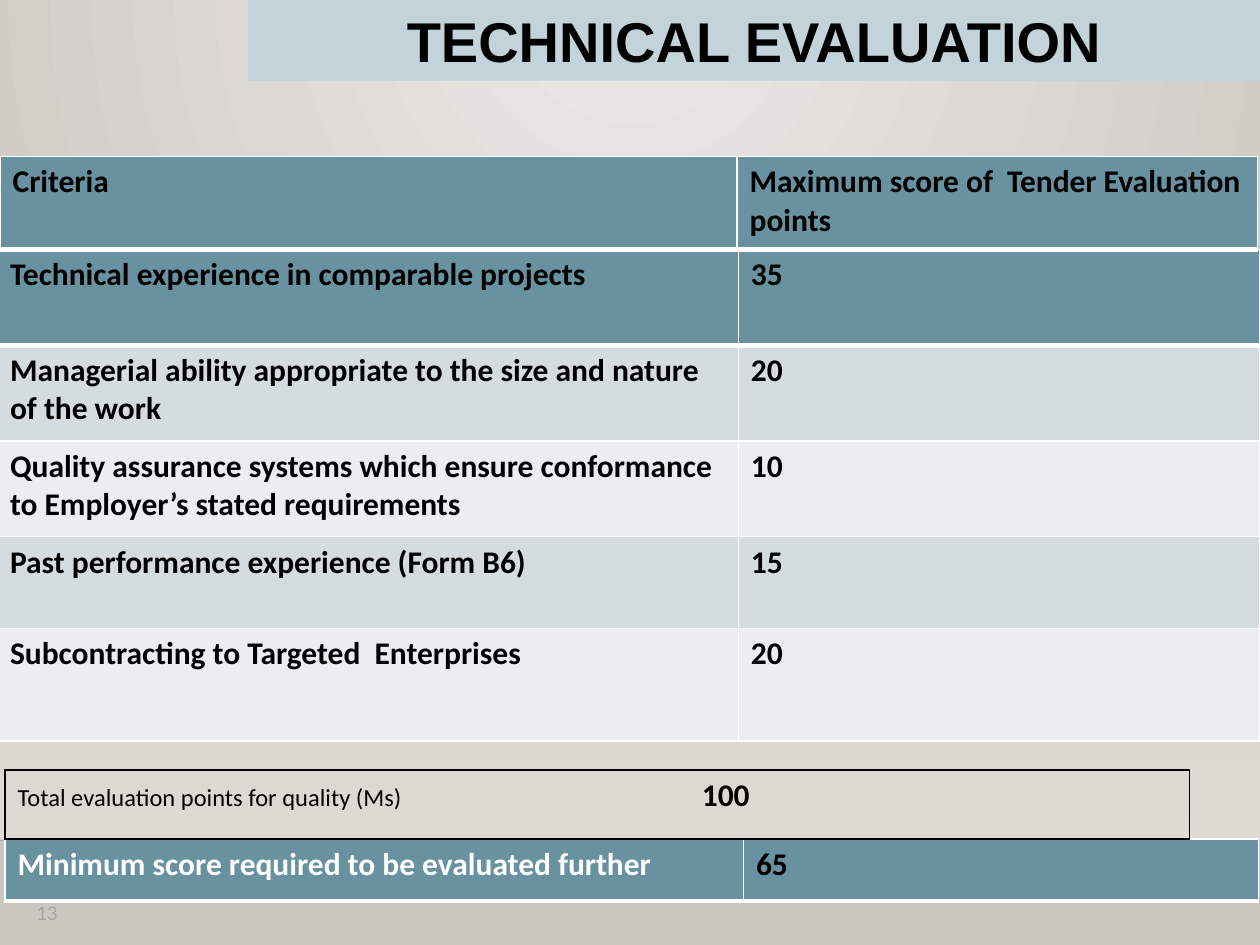
import pptx
import pptx.util
import pptx.oxml
import pptx.oxml.ns
import pptx.dml.color
import pptx.enum.shapes
import pptx.enum.text

Inches = pptx.util.Inches
Pt = pptx.util.Pt
RGBColor = pptx.dml.color.RGBColor
MSO_SHAPE = pptx.enum.shapes.MSO_SHAPE
PP_ALIGN = pptx.enum.text.PP_ALIGN
MSO_ANCHOR = pptx.enum.text.MSO_ANCHOR
qn = pptx.oxml.ns.qn
NS = pptx.oxml.ns.nsdecls("a")

BLACK = RGBColor(0x00, 0x00, 0x00)
NEAR_BLACK = RGBColor(0x00, 0x00, 0x01)
WHITE = RGBColor(0xFF, 0xFF, 0xFF)
GRAY = RGBColor(0xA6, 0xA6, 0xA6)
TEAL = RGBColor(0x68, 0x92, 0xA0)
PALE_BLUE = RGBColor(0xC3, 0xD3, 0xD9)
BAND_DARK = RGBColor(0xD4, 0xDC, 0xDF)
BAND_LIGHT = RGBColor(0xEB, 0xEE, 0xF0)
GLOW = RGBColor(0xEC, 0xEA, 0xE7)
STONE = RGBColor(0xCA, 0xC7, 0xC1)
SAND = RGBColor(0xDF, 0xDB, 0xD5)

BODY = {"name": "Calibri", "size": Pt(18), "bold": True, "color": BLACK}
LABEL = {**BODY, "size": Pt(14), "bold": False}
INVERSE = {**BODY, "color": WHITE}
NUMBER = {**LABEL, "size": Pt(12), "color": GRAY}
HEADING = {**BODY, "name": "Arial", "size": Pt(32)}

CRITERIA = [
    ("Technical experience in comparable projects", "35"),
    ("Managerial ability appropriate to the size and nature of the work", "20"),
    ("Quality assurance systems which ensure conformance to Employer’s stated requirements", "10"),
    ("Past performance experience (Form B6)", "15"),
    ("Subcontracting to Targeted  Enterprises", "20"),
]


def add_run(p, text, style):
    r = p.add_run()
    r.text = text
    for key, value in style.items():
        if key == "color":
            r.font.color.rgb = value
        else:
            setattr(r.font, key, value)


def set_gradient(fill, element, stops, direction):
    fill.gradient()
    grad = element.find(".//" + qn("a:gradFill"))
    gs = "".join(
        f'<a:gs pos="{pos * 1000}"><a:srgbClr val="{color}">'
        f'<a:alpha val="{alpha * 1000}"/></a:srgbClr></a:gs>'
        for pos, color, alpha in stops
    )
    xml = f'<a:gradFill {NS} rotWithShape="1"><a:gsLst>{gs}</a:gsLst>{direction}</a:gradFill>'
    grad.getparent().replace(grad, pptx.oxml.parse_xml(xml))


def set_borders(cell, color, bottom):
    tcPr = cell._tc.get_or_add_tcPr()
    for side, width in (("L", 1), ("R", 1), ("T", 1), ("B", bottom)):
        tcPr.append(pptx.oxml.parse_xml(
            f'<a:ln{side} {NS} w="{Pt(width)}"><a:solidFill>'
            f'<a:srgbClr val="{color}"/></a:solidFill></a:ln{side}>'))


def add_grid(s, x, y, cols, rows):
    frame = s.shapes.add_table(len(rows), len(cols), Inches(x), Inches(y),
                               Inches(sum(cols)), Inches(sum(rows)))
    table = frame.table
    for col, width in zip(table.columns, cols):
        col.width = Inches(width)
    for row, height in zip(table.rows, rows):
        row.height = Inches(height)
    return table


def fill_row(table, index, texts, styles, fill, bottom):
    for cell, text, style in zip(table.rows[index].cells, texts, styles):
        set_borders(cell, WHITE, bottom)
        cell.fill.solid()
        cell.fill.fore_color.rgb = fill
        add_run(cell.text_frame.paragraphs[0], text, style)


def add_backdrop(s, x, y, w, h):
    set_gradient(s.background.fill, s._element, [(0, GLOW, 100), (100, STONE, 100)],
                 '<a:path path="circle"><a:fillToRect l="43000" t="0" r="43000" b="100000"/></a:path>')
    wall = s.shapes.add_shape(MSO_SHAPE.RECTANGLE, Inches(x), Inches(y), Inches(w), Inches(h))
    wall.shadow.inherit = False
    wall.line.fill.background()
    set_gradient(wall.fill, wall._element, [(0, SAND, 0), (100, SAND, 100)],
                 '<a:lin ang="5400000" scaled="0"/>')
    edge = s.shapes.add_connector(pptx.enum.shapes.MSO_CONNECTOR.STRAIGHT,
                                  Inches(x), Inches(y + h), Inches(x + w), Inches(y + h))
    edge.line.width = Pt(1)
    edge.line.color.rgb = NEAR_BLACK
    color = edge._element.find(".//" + qn("a:srgbClr"))
    color.append(pptx.oxml.parse_xml(f'<a:alpha {NS} val="20000"/>'))
    edge._element.spPr.append(pptx.oxml.parse_xml(f"<a:effectLst {NS}/>"))


def add_slide_number(s, x, y, w, h):
    tf = s.shapes.add_textbox(Inches(x), Inches(y), Inches(w), Inches(h)).text_frame
    tf.word_wrap = True
    tf.vertical_anchor = MSO_ANCHOR.MIDDLE
    add_run(tf.paragraphs[0], "13", NUMBER)


def add_title(s, x, y, w, h):
    sp = s.shapes.add_shape(MSO_SHAPE.RECTANGLE, Inches(x), Inches(y), Inches(w), Inches(h))
    sp.shadow.inherit = False
    sp.fill.solid()
    sp.fill.fore_color.rgb = PALE_BLUE
    sp.line.fill.background()
    tf = sp.text_frame
    tf.word_wrap = True
    tf.auto_size = pptx.enum.text.MSO_AUTO_SIZE.SHAPE_TO_FIT_TEXT
    tf.vertical_anchor = MSO_ANCHOR.TOP
    p = tf.paragraphs[0]
    p.alignment = PP_ALIGN.CENTER
    add_run(p, "TECHNICAL EVALUATION", HEADING)


def add_criteria(s, x, y, cols, rows):
    table = add_grid(s, x, y, cols, rows)
    for i, texts in enumerate(CRITERIA):
        fill = TEAL if i == 0 else (BAND_LIGHT, BAND_DARK)[i % 2]
        fill_row(table, i, texts, (BODY, BODY), fill, 3 if i == 0 else 1)


def add_teal_row(s, x, y, cols, h, texts, styles):
    fill_row(add_grid(s, x, y, cols, [h]), 0, texts, styles, TEAL, 3)


def add_total(s, x, y, w, h):
    cell = add_grid(s, x, y, [w], [h]).cell(0, 0)
    set_borders(cell, BLACK, 1)
    cell.fill.background()
    p = cell.text_frame.paragraphs[0]
    p._p.get_or_add_pPr().append(pptx.oxml.parse_xml(
        f'<a:tabLst {NS}><a:tab pos="{Inches(5.43)}" algn="l"/></a:tabLst>'))
    add_run(p, "Total evaluation points for quality (Ms)\t", LABEL)
    add_run(p, "100", BODY)


def main():
    prs = pptx.Presentation()
    prs.slide_width, prs.slide_height = Inches(10), Inches(7.5)
    s = prs.slides.add_slide(prs.slide_layouts[6])
    add_backdrop(s, 0, 2.2, 10, 4.47)
    add_slide_number(s, 0.19, 7.04, 2.25, 0.4)
    add_title(s, 1.97, 0, 8.03, 0.64)
    add_criteria(s, -0.02, 1.98, [5.88, 4.14], [0.76, 0.76, 0.76, 0.73, 0.89])
    add_teal_row(s, 0.04, 6.66, [5.86, 4.09], 0.49,
                 ("Minimum score required to be evaluated further", "65"), (INVERSE, BODY))
    add_teal_row(s, 0, 1.24, [5.85, 4.13], 0.74,
                 ("Criteria", "Maximum score of  Tender Evaluation points"), (BODY, BODY))
    add_total(s, 0.04, 6.11, 9.4, 0.55)
    prs.save("out.pptx")


if __name__ == "__main__":
    main()
